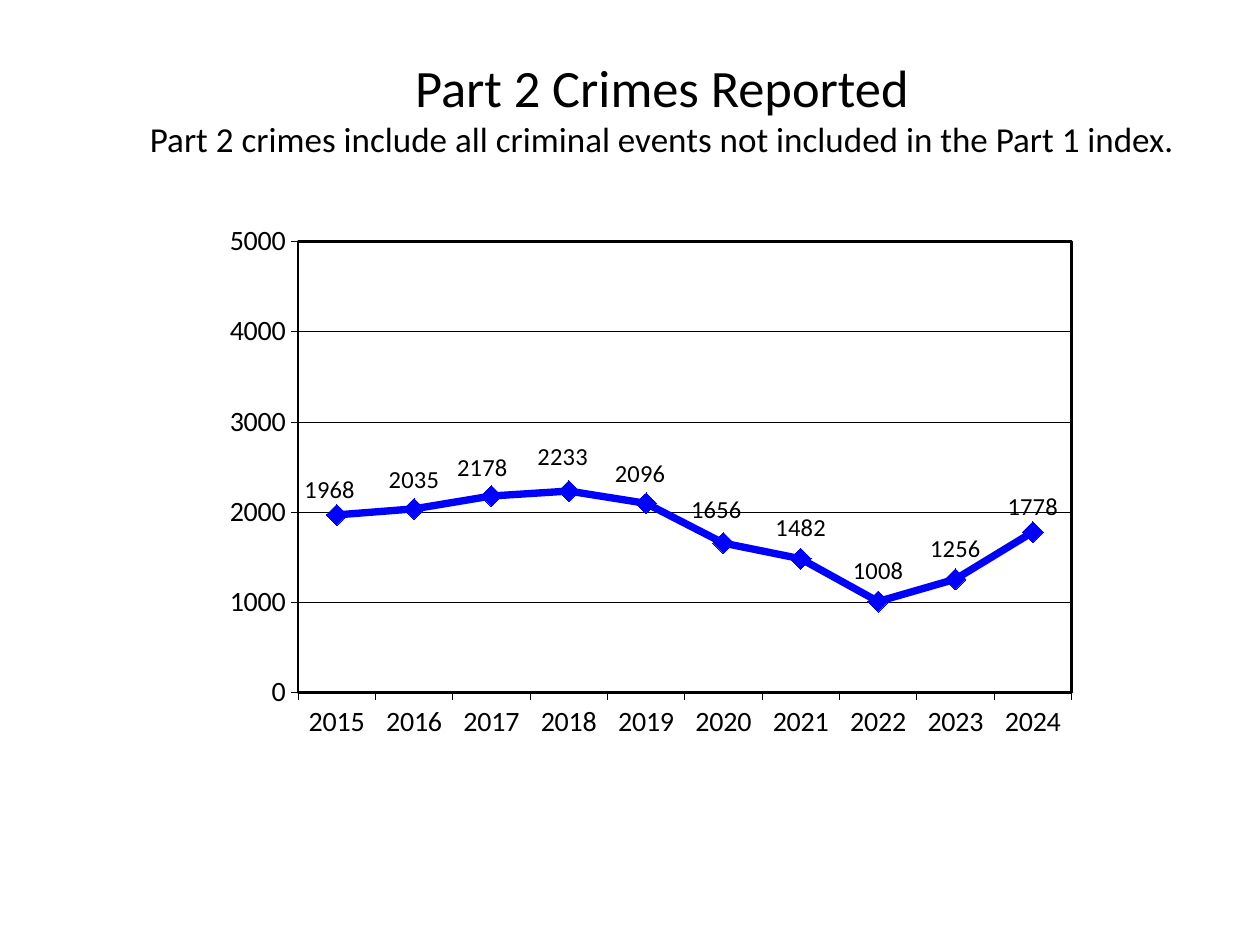
"""Build a slide with a line chart of Part 2 crimes reported by year."""
from dataclasses import dataclass

import pptx
import pptx.chart.data
import pptx.dml.color
import pptx.enum.chart
import pptx.enum.text
import pptx.oxml
import pptx.oxml.ns
import pptx.util
from pptx.util import Cm

Pt = pptx.util.Pt
qn = pptx.oxml.ns.qn


@dataclass(frozen=True)
class Theme:
    font: str = "Calibri"
    ink: str = "000000"
    series: str = "0000FF"
    title: int = 30
    subtitle: int = 20
    axis: int = 16
    label: int = 14
    thin: float = 0.35
    frame: float = 1.5
    stroke: float = 4.2
    marker: int = 12


THEME = Theme()
HEADING = (
    ("Part 2 Crimes Reported", THEME.title),
    ("Part 2 crimes include all criminal events not included in the Part 1 index.", THEME.subtitle),
)
REPORTED = dict(zip(range(2015, 2025), (1968, 2035, 2178, 2233, 2096, 1656, 1482, 1008, 1256, 1778)))
PLOT = {"layoutTarget": "inner", "xMode": "edge", "yMode": "edge",
        "x": 0.151, "y": 0.054, "w": 0.775, "h": 0.782}
LABEL_SHIFTS = {2015: (-0.007, 0.01), 2016: (0, 0.002), 2017: (-0.009, 0.005),
                2018: (-0.006, -0.007), 2019: (-0.006, 0.002),
                2020: (-0.007, -0.005), 2024: (0, 0.01)}


def apply(target, **formats):
    for name, value in formats.items():
        setattr(target, name, value)


def colour(value):
    return pptx.dml.color.RGBColor.from_string(value)


def style_font(font, size):
    apply(font, name=THEME.font, size=Pt(size), bold=False)
    font.color.rgb = colour(THEME.ink)


def style_line(line, value, width):
    line.color.rgb = colour(value)
    line.width = Pt(width)


def manual_layout(values):
    fields = "".join(f'<c:{name} val="{value}"/>' for name, value in values.items())
    return pptx.oxml.parse_xml(
        f'<c:layout {pptx.oxml.ns.nsdecls("c")}><c:manualLayout>{fields}</c:manualLayout></c:layout>')


def add_heading(page):
    box = page.shapes.add_textbox(Cm(2.34), Cm(0.97), Cm(22.02), Cm(2.39))
    apply(box.text_frame, word_wrap=True, vertical_anchor=pptx.enum.text.MSO_ANCHOR.MIDDLE)
    para = box.text_frame.paragraphs[0]
    para.alignment = pptx.enum.text.PP_ALIGN.CENTER
    for index, (text, size) in enumerate(HEADING):
        if index:
            para.add_line_break()
        span = para.add_run()
        span.text = text
        style_font(span.font, size)


def style_axes(chart):
    outside = pptx.enum.chart.XL_TICK_MARK.OUTSIDE
    for axis in (chart.category_axis, chart.value_axis):
        axis.major_tick_mark = outside
        style_line(axis.format.line, THEME.ink, THEME.thin)
        style_font(axis.tick_labels.font, THEME.axis)
    apply(chart.value_axis, minimum_scale=0, maximum_scale=5000, major_unit=1000,
          has_major_gridlines=True)
    style_line(chart.value_axis.major_gridlines.format.line, THEME.ink, THEME.thin)


def style_plot_area(chart):
    area = chart.plots[0]._element.getparent()
    for layout in area.findall(qn("c:layout")):
        area.remove(layout)
    area.insert(0, manual_layout(PLOT))
    area.append(pptx.oxml.parse_xml(
        f'<c:spPr {pptx.oxml.ns.nsdecls("c", "a")}><a:noFill/><a:ln w="{Pt(THEME.frame)}">'
        f'<a:solidFill><a:srgbClr val="{THEME.ink}"/></a:solidFill></a:ln></c:spPr>'))


def style_series(series):
    series.smooth = False
    style_line(series.format.line, THEME.series, THEME.stroke)
    apply(series.marker, style=pptx.enum.chart.XL_MARKER_STYLE.DIAMOND, size=THEME.marker)
    series.marker.format.fill.solid()
    series.marker.format.fill.fore_color.rgb = colour(THEME.series)
    style_line(series.marker.format.line, THEME.series, THEME.thin)


def style_labels(series):
    above = pptx.enum.chart.XL_LABEL_POSITION.ABOVE
    apply(series.data_labels, show_value=True, position=above)
    style_font(series.data_labels.font, THEME.label)
    years = list(REPORTED)
    for year in LABEL_SHIFTS:
        label = series.points[years.index(year)].data_label
        style_font(label.font, THEME.label)
        label.position = above
    for element in series._element.iter(qn("c:dLbl")):
        year = years[int(element.find(qn("c:idx")).get("val"))]
        element.insert(1, manual_layout(dict(zip("xy", LABEL_SHIFTS[year]))))


def add_crime_chart(page):
    data = pptx.chart.data.CategoryChartData()
    data.categories = [str(year) for year in REPORTED]
    data.add_series("Series 1", REPORTED.values())
    chart = page.shapes.add_chart(
        pptx.enum.chart.XL_CHART_TYPE.LINE_MARKERS,
        Cm(2.97), Cm(4.24), Cm(20.12), Cm(11.63), data).chart
    apply(chart, has_legend=False, has_title=False)
    style_font(chart.font, THEME.axis)
    chart.plots[0].vary_by_categories = False
    style_axes(chart)
    style_plot_area(chart)
    style_series(chart.plots[0].series[0])
    style_labels(chart.plots[0].series[0])


def main():
    deck = pptx.Presentation()
    apply(deck, slide_width=Cm(25.4), slide_height=Cm(19.05))
    page = deck.slides.add_slide(deck.slide_layouts[6])
    add_heading(page)
    add_crime_chart(page)
    deck.save("out.pptx")


if __name__ == "__main__":
    main()
